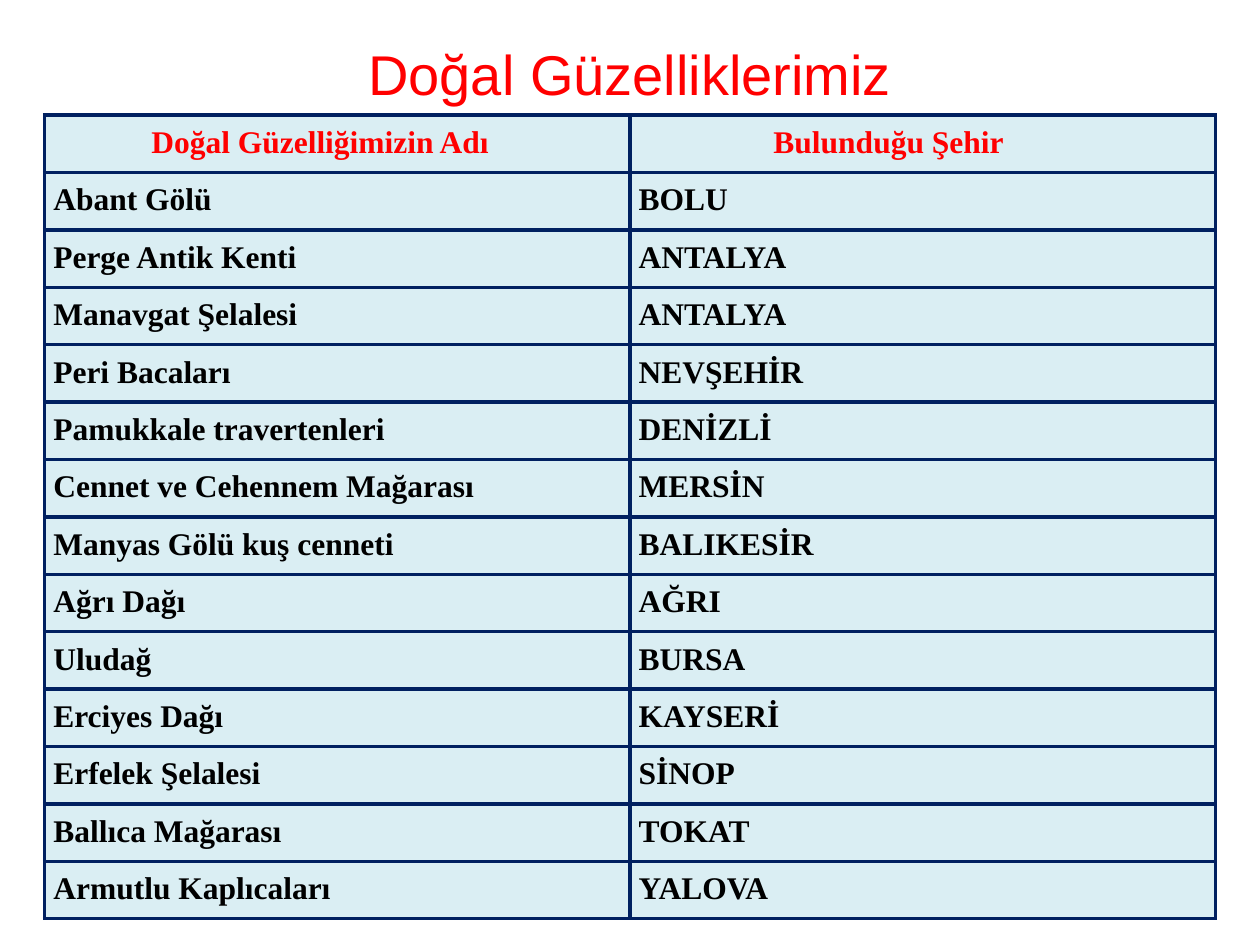
import pptx
import pptx.dml.color
import pptx.enum.text
import pptx.oxml
import pptx.oxml.ns
import pptx.util

Pt = pptx.util.Pt
RGBColor = pptx.dml.color.RGBColor

TITLE = "Doğal Güzelliklerimiz"
HEADERS = ("Doğal Güzelliğimizin Adı", "Bulunduğu Şehir")
PLACES = [
    ("Abant Gölü", "BOLU"),
    ("Perge Antik Kenti", "ANTALYA"),
    ("Manavgat Şelalesi", "ANTALYA"),
    ("Peri Bacaları", "NEVŞEHİR"),
    ("Pamukkale travertenleri", "DENİZLİ"),
    ("Cennet ve Cehennem Mağarası", "MERSİN"),
    ("Manyas Gölü kuş cenneti", "BALIKESİR"),
    ("Ağrı Dağı", "AĞRI"),
    ("Uludağ", "BURSA"),
    ("Erciyes Dağı", "KAYSERİ"),
    ("Erfelek Şelalesi", "SİNOP"),
    ("Ballıca Mağarası", "TOKAT"),
    ("Armutlu Kaplıcaları", "YALOVA"),
]

RED = RGBColor(0xFF, 0x00, 0x00)
BLACK = RGBColor(0x00, 0x00, 0x00)
PALE_BLUE = RGBColor(0xDA, 0xEE, 0xF3)
NAVY = RGBColor(0x00, 0x20, 0x60)

SLIDE_WIDTH, SLIDE_HEIGHT = 720, 540
TABLE_LEFT, TABLE_TOP, TABLE_WIDTH, TABLE_HEIGHT = 25.5, 65.8, 669, 459.2
HEADER_INDENTS = (61, 82)
BODY_INDENTS = (5, 5)
LINE_HEIGHT = 12.9
BORDER_WIDTH = 2.25


def format_run(run, font_name, size, color, bold=False):
    run.font.name = font_name
    run.font.size = Pt(size)
    run.font.bold = bold
    run.font.color.rgb = color


def add_title(slide):
    title = slide.shapes.title
    title.left, title.top = Pt(0), Pt(18.5)
    title.width, title.height = Pt(SLIDE_WIDTH), Pt(46)
    text_frame = title.text_frame
    text_frame.text = TITLE
    text_frame.vertical_anchor = pptx.enum.text.MSO_ANCHOR.MIDDLE
    paragraph = text_frame.paragraphs[0]
    paragraph.alignment = pptx.enum.text.PP_ALIGN.CENTER
    format_run(paragraph.runs[0], "Arial", 32, RED)


def add_borders(cell):
    properties = cell._tc.get_or_add_tcPr()
    for side in ("lnL", "lnR", "lnT", "lnB"):
        properties.append(pptx.oxml.parse_xml(
            f'<a:{side} {pptx.oxml.ns.nsdecls("a")} w="{Pt(BORDER_WIDTH)}">'
            f'<a:solidFill><a:srgbClr val="{NAVY}"/></a:solidFill></a:{side}>'
        ))


def fill_cell(cell, text, indent, color):
    add_borders(cell)
    cell.fill.solid()
    cell.fill.fore_color.rgb = PALE_BLUE
    cell.margin_left, cell.margin_top = Pt(indent), Pt(LINE_HEIGHT)
    cell.margin_right = cell.margin_bottom = Pt(0)
    cell.vertical_anchor = pptx.enum.text.MSO_ANCHOR.TOP
    cell.text_frame.text = text
    paragraph = cell.text_frame.paragraphs[0]
    paragraph.line_spacing = Pt(LINE_HEIGHT)
    format_run(paragraph.runs[0], "Times New Roman", 18, color, bold=True)


def add_places_table(slide):
    rows = [HEADERS] + PLACES
    table = slide.shapes.add_table(
        len(rows), len(HEADERS),
        Pt(TABLE_LEFT), Pt(TABLE_TOP), Pt(TABLE_WIDTH), Pt(TABLE_HEIGHT),
    ).table
    for column in table.columns:
        column.width = Pt(TABLE_WIDTH / len(HEADERS))
    for row_index, texts in enumerate(rows):
        table.rows[row_index].height = Pt(TABLE_HEIGHT / len(rows))
        is_header = row_index == 0
        indents = HEADER_INDENTS if is_header else BODY_INDENTS
        color = RED if is_header else BLACK
        for column_index, (text, indent) in enumerate(zip(texts, indents)):
            fill_cell(table.cell(row_index, column_index), text, indent, color)


def main():
    presentation = pptx.Presentation()
    presentation.slide_width = Pt(SLIDE_WIDTH)
    presentation.slide_height = Pt(SLIDE_HEIGHT)
    slide = presentation.slides.add_slide(presentation.slide_layouts[5])
    add_places_table(slide)
    add_title(slide)
    presentation.save("out.pptx")


if __name__ == "__main__":
    main()
